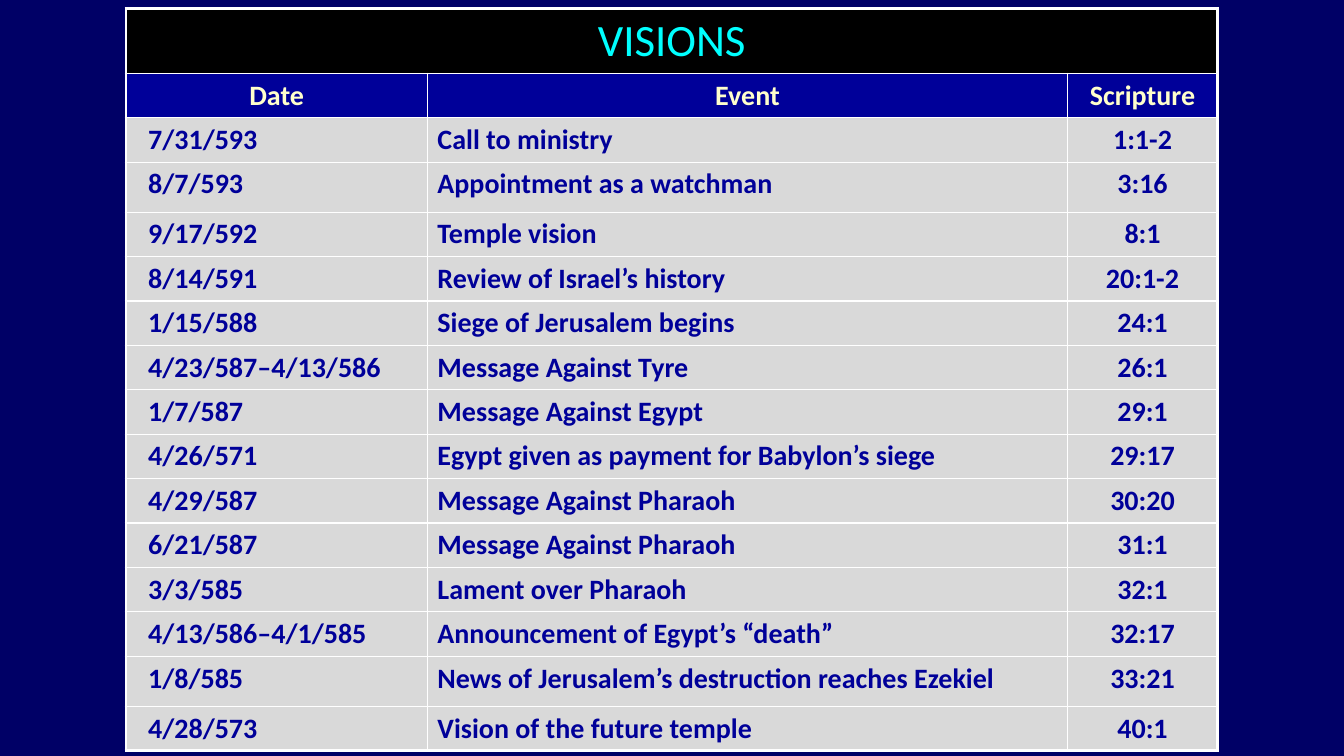
from lxml.etree import SubElement
from pptx import Presentation
from pptx.dml.color import RGBColor
from pptx.enum.text import MSO_ANCHOR, PP_ALIGN
from pptx.oxml.ns import qn
from pptx.util import Pt

COLORS = {
    "background": "000066",
    "title_fill": "000000",
    "title_text": "00FFFF",
    "header_fill": "000099",
    "header_text": "FFFFCC",
    "body_fill": "D9D9D9",
    "body_text": "000099",
    "border": "FFFFFF",
}
OUTER, INNER = 2.25, 1

ROWS = [
    ("VISIONS", "", ""),
    ("Date", "Event", "Scripture"),
    ("7/31/593", "Call to ministry", "1:1-2"),
    ("8/7/593", "Appointment as a watchman", "3:16"),
    ("9/17/592", "Temple vision", "8:1"),
    ("8/14/591", "Review of Israel’s history", "20:1-2"),
    ("1/15/588", "Siege of Jerusalem begins", "24:1"),
    ("4/23/587–4/13/586", "Message Against Tyre", "26:1"),
    ("1/7/587", "Message Against Egypt", "29:1"),
    ("4/26/571", "Egypt given as payment for Babylon’s siege", "29:17"),
    ("4/29/587", "Message Against Pharaoh", "30:20"),
    ("6/21/587", "Message Against Pharaoh", "31:1"),
    ("3/3/585", "Lament over Pharaoh", "32:1"),
    ("4/13/586–4/1/585", "Announcement of Egypt’s “death”", "32:17"),
    ("1/8/585", "News of Jerusalem’s destruction reaches Ezekiel", "33:21"),
    ("4/28/573", "Vision of the future temple", "40:1"),
]
COLUMN_WIDTHS = [215.3, 457.2, 107.3]
TITLE_HEIGHT, ROW_HEIGHT, TALL_HEIGHT = 45.7, 31, 35.8
TALL_ROWS = (3, 14)


def add_borders(cell, widths):
    properties = cell._tc.get_or_add_tcPr()
    for side, width in zip("LRTB", widths):
        line = SubElement(properties, qn(f"a:ln{side}"), w=str(Pt(width)))
        fill = SubElement(line, qn("a:solidFill"))
        SubElement(fill, qn("a:srgbClr"), val=COLORS["border"])


presentation = Presentation()
presentation.slide_width = Pt(960)
presentation.slide_height = Pt(540)
slide = presentation.slides.add_slide(presentation.slide_layouts[6])
slide.background.fill.solid()
slide.background.fill.fore_color.rgb = RGBColor.from_string(COLORS["background"])

heights = [TALL_HEIGHT if index in TALL_ROWS else ROW_HEIGHT for index in range(len(ROWS))]
heights[0] = TITLE_HEIGHT
table = slide.shapes.add_table(
    len(ROWS), len(COLUMN_WIDTHS), Pt(90), Pt(6), Pt(sum(COLUMN_WIDTHS)), Pt(sum(heights))
).table
table.horz_banding = False
for column, width in zip(table.columns, COLUMN_WIDTHS):
    column.width = Pt(width)
for row, height in zip(table.rows, heights):
    row.height = Pt(height)
table.cell(0, 0).merge(table.cell(0, 2))

last_row, last_column = len(ROWS) - 1, len(COLUMN_WIDTHS) - 1
for row_index, texts in enumerate(ROWS):
    kind = ("title", "header")[row_index] if row_index < 2 else "body"
    for column_index, text in enumerate(texts):
        cell = table.cell(row_index, column_index)
        if cell.is_spanned:
            continue
        right_edge = column_index == last_column or kind == "title"
        add_borders(cell, [
            OUTER if column_index == 0 else INNER,
            OUTER if right_edge else INNER,
            OUTER if row_index == 0 else INNER,
            OUTER if row_index == last_row else INNER,
        ])
        cell.fill.solid()
        cell.fill.fore_color.rgb = RGBColor.from_string(COLORS[f"{kind}_fill"])
        cell.vertical_anchor = MSO_ANCHOR.MIDDLE if kind == "title" else MSO_ANCHOR.TOP
        cell.text_frame.text = text
        paragraph = cell.text_frame.paragraphs[0]
        centered = kind != "body" or column_index == last_column
        paragraph.alignment = PP_ALIGN.CENTER if centered else PP_ALIGN.LEFT
        if kind == "body" and column_index == 0:
            paragraph._p.get_or_add_pPr().set("marL", str(Pt(8.64)))
        font = paragraph.runs[0].font
        font.name = "Calibri"
        font.size = Pt(32 if kind == "title" else 20)
        font.bold = kind != "title"
        font.color.rgb = RGBColor.from_string(COLORS[f"{kind}_text"])

presentation.save("out.pptx")
